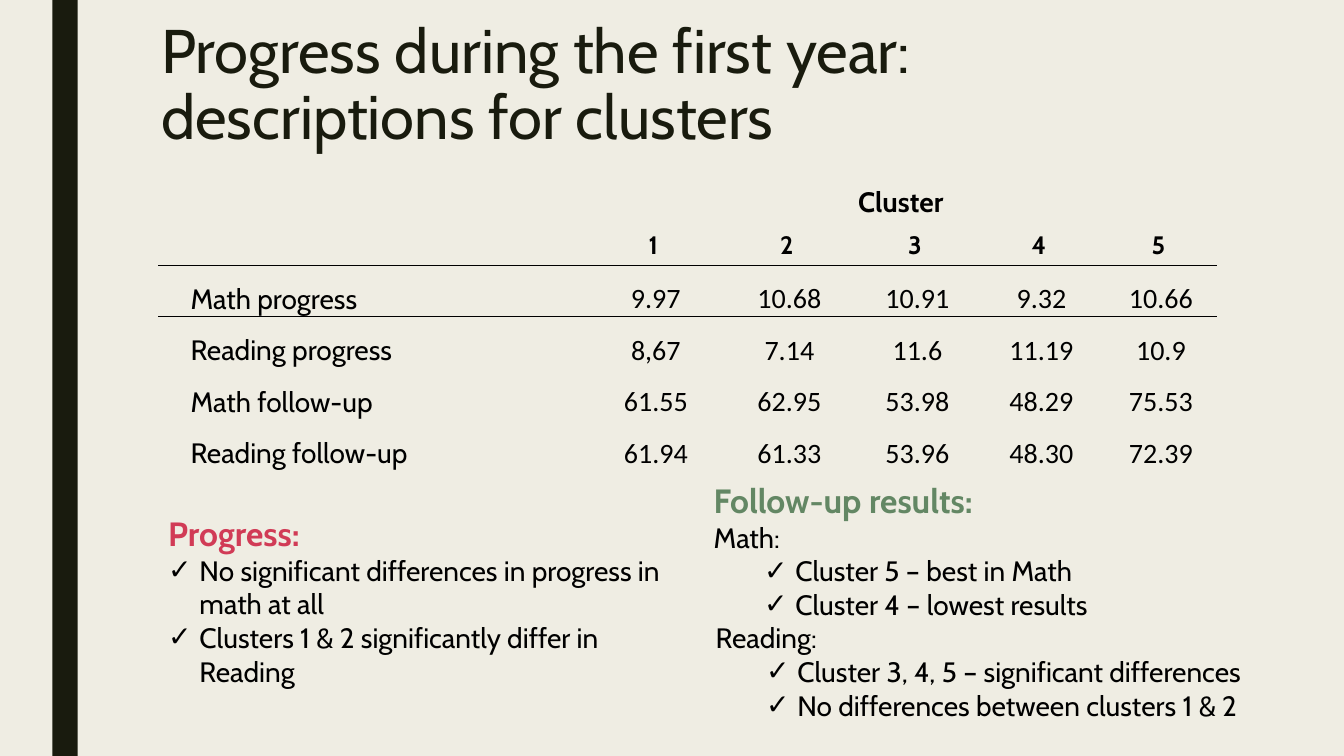
from dataclasses import dataclass

from lxml.etree import SubElement
from pptx import Presentation
from pptx.dml.color import RGBColor
from pptx.enum.shapes import MSO_SHAPE
from pptx.enum.text import MSO_ANCHOR, PP_ALIGN
from pptx.oxml.ns import qn
from pptx.util import Inches, Pt


@dataclass(frozen=True)
class Theme:
    paper: str = "EFEDE3"
    ink: str = "191B0E"
    black: str = "000000"
    red: str = "D13B56"
    green: str = "638764"
    font: str = "Cabin"
    number_font: str = "Calibri"
    title_size: int = 44
    heading_size: int = 24
    body_size: int = 20
    cluster_size: int = 18


theme = Theme()


def write(frame, text, size=theme.body_size, color=theme.black, font=theme.font,
          bold=False, align=PP_ALIGN.LEFT, spacing=None, left=0, indent=0,
          bullet=None, level=0):
    """Fill the frame's empty first paragraph, or append a new one."""
    para = frame.paragraphs[0]
    if para.runs:
        para = frame.add_paragraph()
    para.alignment = align
    para.level = level
    if spacing:
        para.line_spacing = spacing
    properties = para._p.get_or_add_pPr()
    properties.set("marL", str(Inches(left)))
    properties.set("indent", str(Inches(indent)))
    if bullet:
        SubElement(properties, qn("a:buFont"), typeface="Wingdings 2" if bullet == "" else "Arial")
        SubElement(properties, qn("a:buChar"), char=bullet)
    span = para.add_run()
    span.text = text
    span.font.size = Pt(size)
    span.font.name = font
    span.font.bold = bold
    span.font.color.rgb = RGBColor.from_string(color)


def rule_cell(cell, side):
    """Draw a thin line on one side of a cell: lnT or lnB."""
    properties = cell._tc.get_or_add_tcPr()
    line = properties.makeelement(qn(f"a:{side}"), {"w": str(Pt(1))})
    fill = SubElement(line, qn("a:solidFill"))
    SubElement(fill, qn("a:srgbClr"), val=theme.black)
    properties.insert(0, line)


deck = Presentation()
deck.slide_width, deck.slide_height = Inches(13.33), Inches(7.5)
page = deck.slides.add_slide(deck.slide_layouts[6])
page.background.fill.solid()
page.background.fill.fore_color.rgb = RGBColor.from_string(theme.paper)

side_bar = page.shapes.add_shape(
    MSO_SHAPE.RECTANGLE, Inches(0.52), 0, Inches(0.25), deck.slide_height)
side_bar.shadow.inherit = False
side_bar.fill.solid()
side_bar.fill.fore_color.rgb = RGBColor.from_string(theme.ink)
side_bar.line.fill.background()

title_box = page.shapes.add_textbox(Inches(1.5), Inches(0.16), Inches(10.5), Inches(1.62))
title_box.text_frame.word_wrap = True
write(title_box.text_frame, "Progress during the first year: descriptions for clusters",
      size=theme.title_size, color=theme.ink, spacing=0.89)

# Cluster results
column_widths = [4.23, 1.36, 1.29, 1.25, 1.21, 1.16]
row_heights = [0.44, 0.4] + [0.51] * 4
results = [
    ("Math progress", "9.97", "10.68", "10.91", "9.32", "10.66"),
    ("Reading progress", "8,67", "7.14", "11.6", "11.19", "10.9"),
    ("Math follow-up", "61.55", "62.95", "53.98", "48.29", "75.53"),
    ("Reading follow-up", "61.94", "61.33", "53.96", "48.30", "72.39"),
]
table_frame = page.shapes.add_table(
    len(row_heights), len(column_widths), Inches(1.57), Inches(1.79),
    Inches(sum(column_widths)), Inches(sum(row_heights)))
table = table_frame.table
table.first_row = table.horz_banding = False
no_style_no_grid = "{2D5ABB26-0587-4C30-8999-92F81FD0307C}"
table._tbl.tblPr.find(qn("a:tableStyleId")).text = no_style_no_grid
for column, width in zip(table.columns, column_widths):
    column.width = Inches(width)
for row, height in zip(table.rows, row_heights):
    row.height = Inches(height)
for cell in table.iter_cells():
    cell.fill.background()

table.cell(0, 0).merge(table.cell(1, 0))
table.cell(0, 1).merge(table.cell(0, 5))
write(table.cell(0, 1).text_frame, "Cluster", bold=True, align=PP_ALIGN.CENTER)
for cluster in range(1, 6):
    write(table.cell(1, cluster).text_frame, str(cluster),
          size=theme.cluster_size, bold=True, align=PP_ALIGN.CENTER)

for row_index, values in enumerate(results, start=2):
    for column_index, value in enumerate(values):
        cell = table.cell(row_index, column_index)
        cell.margin_left = cell.margin_right = Inches(0.07)
        cell.margin_top = cell.margin_bottom = 0
        if column_index == 0:
            cell.vertical_anchor = MSO_ANCHOR.BOTTOM
            write(cell.text_frame, value, spacing=1.5, left=0.25)
        else:
            cell.vertical_anchor = MSO_ANCHOR.MIDDLE
            write(cell.text_frame, value, font=theme.number_font,
                  align=PP_ALIGN.CENTER, spacing=1.5, indent=0.05)

for column_index in range(len(column_widths)):
    first_result = table.cell(2, column_index)
    rule_cell(first_result, "lnB")
    rule_cell(first_result, "lnT")

# Findings below the table
check = {"bullet": "✓", "left": 0.31, "indent": -0.31}
math_check = {**check, "left": 0.81, "level": 1}
reading_check = {**check, "left": 0.83, "level": 2}
heading = {"size": theme.heading_size, "bold": True}
findings = [
    ((1.57, 5.04, 5.09, 1.85), [
        ("Progress:", {**heading, "color": theme.red}),
        ("No significant differences in progress in math at all", check),
        ("Clusters 1 & 2 significantly differ in Reading", check),
    ]),
    ((6.98, 4.71, 6.22, 2.52), [
        ("Follow-up results:", {**heading, "color": theme.green}),
        ("Math:", {}),
        ("Cluster 5 – best in Math", math_check),
        ("Cluster 4 – lowest results", math_check),
        ("Reading:", {"left": 0.02, "level": 1}),
        ("Cluster 3, 4, 5 – significant differences", reading_check),
        ("No differences between clusters 1 & 2", reading_check),
    ]),
]
for place, lines in findings:
    box = page.shapes.add_textbox(*[Inches(length) for length in place])
    box.text_frame.word_wrap = True
    for text, style in lines:
        write(box.text_frame, text, **style)

deck.save("out.pptx")
